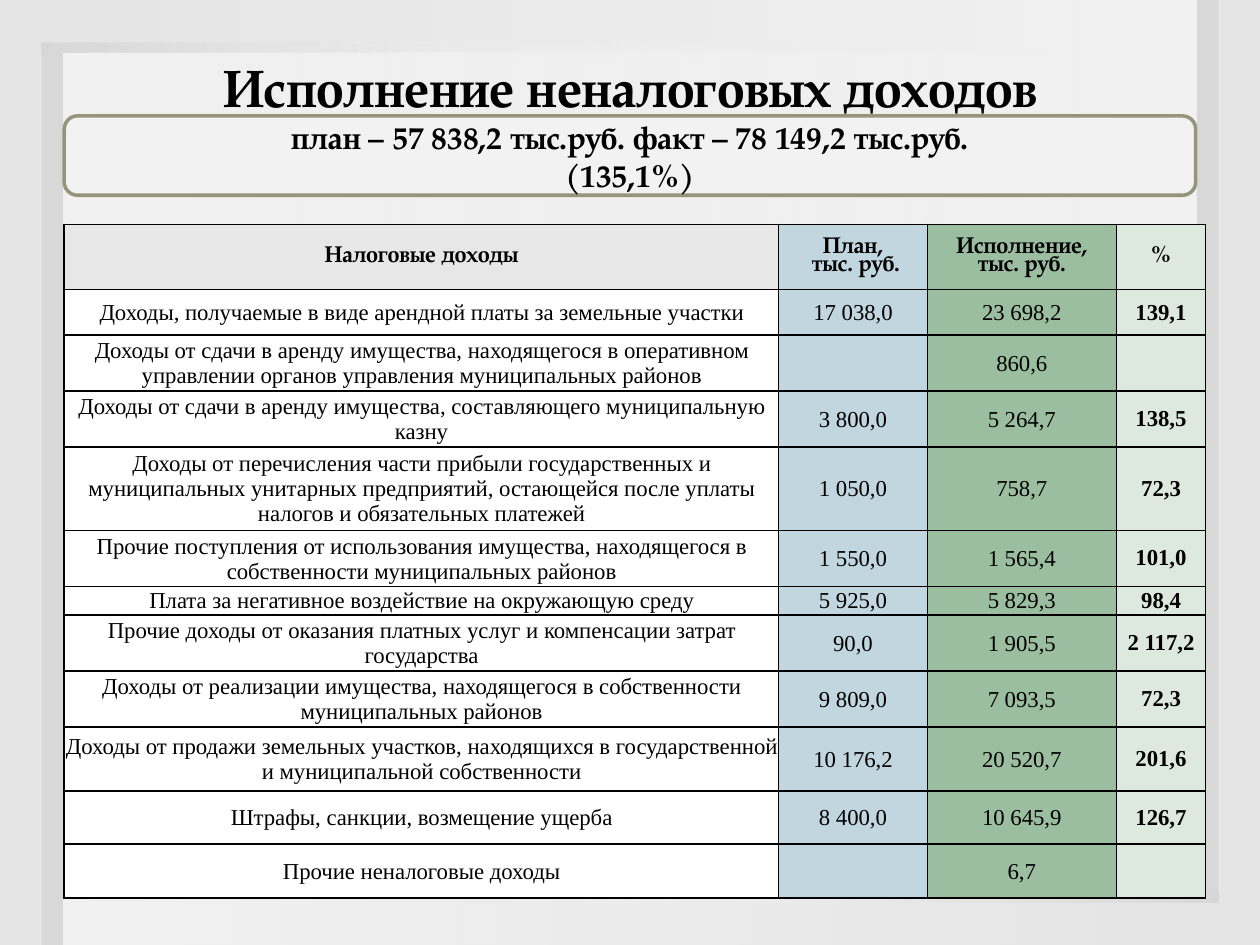
from lxml import etree
from pptx import Presentation
from pptx.dml.color import RGBColor
from pptx.enum.shapes import MSO_SHAPE as Shape
from pptx.enum.text import MSO_ANCHOR as Anchor, PP_ALIGN as Align
from pptx.oxml import parse_xml
from pptx.oxml.ns import nsdecls, qn
from pptx.util import Inches, Pt

# Content
TITLE = "Исполнение неналоговых доходов"
SUMMARY = ["план – 57 838,2 тыс.руб. факт – 78 149,2 тыс.руб.", "(135,1%)"]
HEADERS = ["Налоговые доходы", "План,\n тыс. руб.", "Исполнение, тыс. руб.", "%"]
INCOME = [  # source, plan, actual, percent, row height
    ("Доходы, получаемые в виде арендной платы за земельные участки",
     "17 038,0", "23 698,2", "139,1", 0.36),
    ("Доходы от сдачи в аренду имущества, находящегося в оперативном "
     "управлении органов управления муниципальных районов", "", "860,6", "", 0.43),
    ("Доходы от сдачи в аренду имущества, составляющего муниципальную казну",
     "3 800,0", "5 264,7", "138,5", 0.43),
    ("Доходы от перечисления части прибыли государственных и муниципальных унитарных "
     "предприятий, остающейся после уплаты налогов и обязательных платежей",
     "1 050,0", "758,7", "72,3", 0.65),
    ("Прочие поступления от использования имущества, находящегося в собственности "
     "муниципальных районов", "1 550,0", "1 565,4", "101,0", 0.43),
    ("Плата за негативное воздействие на окружающую среду",
     "5 925,0", "5 829,3", "98,4", 0.22),
    ("Прочие доходы от оказания платных услуг и компенсации затрат государства",
     "90,0", "1 905,5", "2 117,2", 0.43),
    ("Доходы от реализации имущества, находящегося в собственности муниципальных районов",
     "9 809,0", "7 093,5", "72,3", 0.43),
    ("Доходы от продажи земельных участков, находящихся в государственной "
     "и муниципальной собственности", "10 176,2", "20 520,7", "201,6", 0.51),
    ("Штрафы, санкции, возмещение ущерба", "8 400,0", "10 645,9", "126,7", 0.42),
    ("Прочие неналоговые доходы", "", "6,7", "", 0.43),
]

THEME = {
    "back": "E5E5E5", "frame": "D8D8D8", "panel": "FFFFFF", "text": "000000",
    "summary": "F2F2F2", "outline": "98947C", "header": "E7E7E7",
    "columns": ["FFFFFF", "C1D6DF", "9CBEA0", "DDE8DE"],
    "display": "TeX Gyre Pagella", "body": "Times New Roman",
    "title_size": 30, "summary_size": 18, "table_size": 13,
}

# Geometry, in inches
WIDTH, HEIGHT = 10, 7.5
MARGIN, BAND, EDGE = 0.5, 0.42, 0.17
STRIP = BAND / 5
PANEL_W, PANEL_H = WIDTH - 2 * MARGIN, HEIGHT - BAND
TABLE_LEFT, TABLE_TOP = 0.51, 1.78
COLUMNS = [5.67, 1.18, 1.5, 0.71]
HEADER_HEIGHT = 0.52


def rgb(key):
    return RGBColor.from_string(THEME.get(key, key))


def add_shape(slide, kind, box, fill):
    shape = slide.shapes.add_shape(kind, *map(Inches, box))
    shape.shadow.inherit = False
    shape.line.fill.background()
    shape.fill.solid()
    shape.fill.fore_color.rgb = rgb(fill)
    return shape


def add_fade(slide, box, stops, angle):
    """Rectangle with a gradient of (position %, colour key, opacity %) stops."""
    shape = add_shape(slide, Shape.RECTANGLE, box, "panel")
    solid = shape.fill._xPr.find(qn("a:solidFill"))
    gradient = parse_xml(f'<a:gradFill rotWithShape="1" {nsdecls("a")}><a:gsLst/></a:gradFill>')
    for position, key, opacity in stops:
        stop = etree.SubElement(gradient[0], qn("a:gs"), pos=str(position * 1000))
        colour = etree.SubElement(stop, qn("a:srgbClr"), val=THEME[key])
        etree.SubElement(colour, qn("a:alpha"), val=str(opacity * 1000))
    etree.SubElement(gradient, qn("a:lin"), ang=str(angle * 60000), scaled="0")
    solid.getparent().replace(solid, gradient)


def write(frame, lines, face, size, bold, spacing=None):
    frame.word_wrap = True
    frame.text = "\n".join(lines)
    for paragraph in frame.paragraphs:
        paragraph.alignment = Align.CENTER
        if spacing:
            paragraph.line_spacing = spacing
        font = paragraph.font
        font.name, font.size, font.bold = THEME[face], Pt(THEME[size]), bold
        font.color.rgb = rgb("text")


def style_cell(cell, text, fill, margins, face, bold, spacing=None):
    write(cell.text_frame, [text], face, "table_size", bold, spacing)
    cell.vertical_anchor = Anchor.MIDDLE
    (cell.margin_left, cell.margin_top,
     cell.margin_right, cell.margin_bottom) = map(Inches, margins)
    properties = cell._tc.get_or_add_tcPr()
    for side in "LRTB":  # borders come before the fill
        border = etree.SubElement(properties, qn(f"a:ln{side}"), w=str(Pt(1)))
        colour = etree.SubElement(border, qn("a:solidFill"))
        etree.SubElement(colour, qn("a:srgbClr"), val=THEME["text"])
    cell.fill.solid()
    cell.fill.fore_color.rgb = rgb(fill)


def add_backdrop(slide):
    slide.background.fill.solid()
    slide.background.fill.fore_color.rgb = rgb("back")
    glow = [(0, "panel", 50), (100, "panel", 0)]
    shade = [(0, "frame", 100), (65, "panel", 0), (100, "panel", 0)]
    right, left = WIDTH - MARGIN, MARGIN - EDGE
    add_fade(slide, (MARGIN, 0, PANEL_W, PANEL_H), glow, 180)
    add_fade(slide, (MARGIN, BAND, PANEL_W, PANEL_H), glow, 0)
    add_shape(slide, Shape.RECTANGLE, (right, 0, EDGE, PANEL_H), "frame")
    add_shape(slide, Shape.RECTANGLE, (left, BAND, EDGE, PANEL_H), "frame")
    add_fade(slide, (MARGIN, PANEL_H, PANEL_W + EDGE, STRIP), shade, 180)
    add_fade(slide, (left, BAND - STRIP, PANEL_W + EDGE, STRIP), shade, 0)


def add_heading(slide):
    title = slide.shapes.add_textbox(*map(Inches, (0.59, 0.21, 8.83, 0.73))).text_frame
    write(title, [TITLE], "display", "title_size", True)
    title.vertical_anchor = Anchor.BOTTOM
    title.margin_bottom = 0

    summary = add_shape(slide, Shape.ROUNDED_RECTANGLE, (0.51, 0.92, 8.98, 0.63), "summary")
    summary.line.color.rgb = rgb("outline")
    summary.line.width = Pt(2)
    write(summary.text_frame, SUMMARY, "display", "summary_size", True)
    summary.text_frame.vertical_anchor = Anchor.MIDDLE


def add_income_table(slide):
    heights = [HEADER_HEIGHT] + [row[-1] for row in INCOME]
    box = (TABLE_LEFT, TABLE_TOP, sum(COLUMNS), sum(heights))
    table = slide.shapes.add_table(len(heights), len(COLUMNS), *map(Inches, box)).table
    for column, width in zip(table.columns, COLUMNS):
        column.width = Inches(width)
    for row, height in zip(table.rows, heights):
        row.height = Inches(height)

    # Header row
    header_fills = ["header"] + THEME["columns"][1:]
    for c, (text, fill) in enumerate(zip(HEADERS, header_fills)):
        style_cell(table.cell(0, c), text, fill, (0.1, 0.05, 0.1, 0.05), "display", True, 0.8)

    # Income rows: only the percent column is bold
    for r, (*values, _) in enumerate(INCOME, 1):
        for c, (text, fill) in enumerate(zip(values, THEME["columns"])):
            percent = c == len(COLUMNS) - 1
            margins = (0.07, 0, 0.07, 0) if percent else (0.01, 0.01, 0.01, 0)
            style_cell(table.cell(r, c), text, fill, margins, "body", percent)


def main():
    deck = Presentation()
    deck.slide_width, deck.slide_height = Inches(WIDTH), Inches(HEIGHT)
    slide = deck.slides.add_slide(deck.slide_layouts[6])
    add_backdrop(slide)
    add_heading(slide)
    add_income_table(slide)
    deck.save("out.pptx")


if __name__ == "__main__":
    main()
